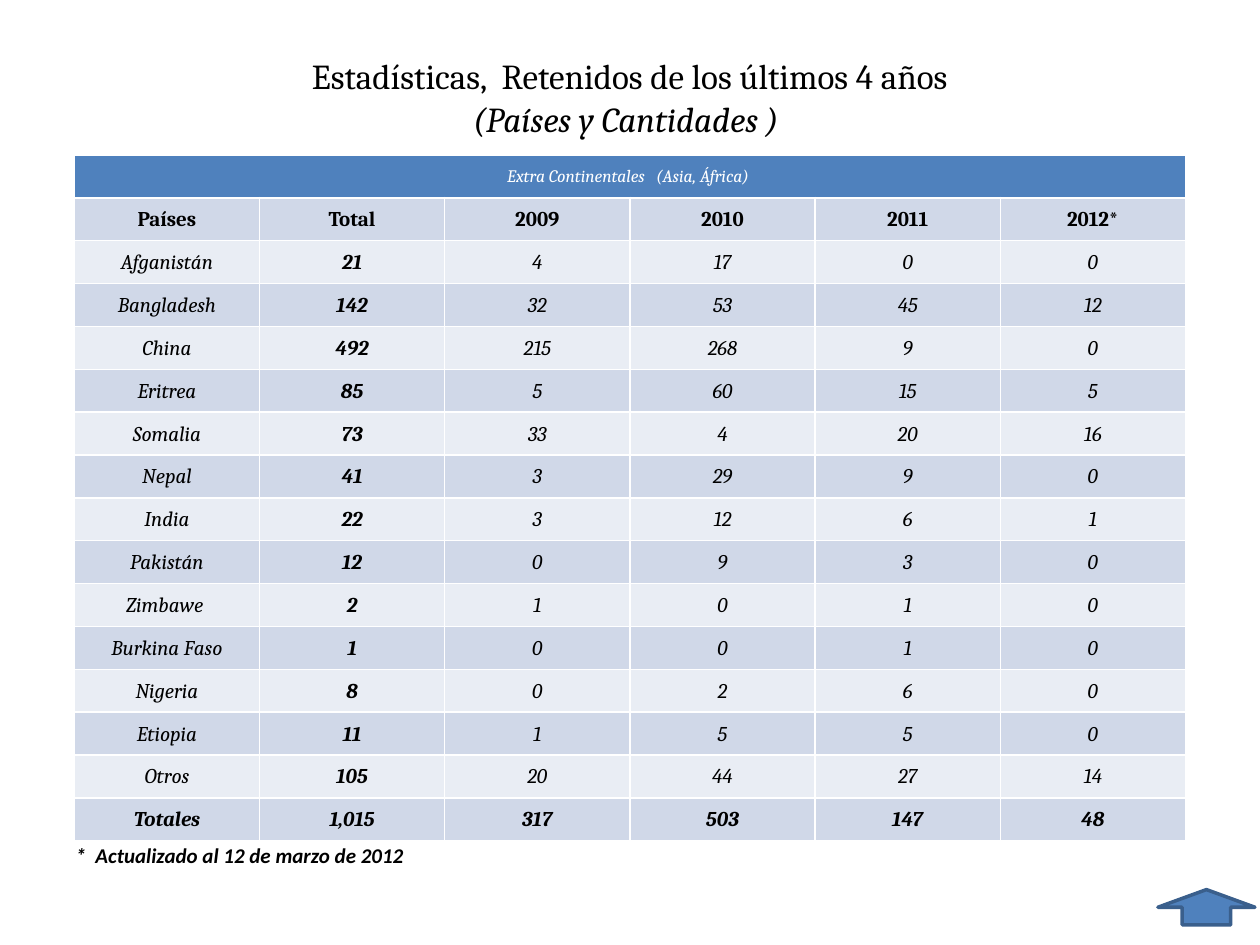
from dataclasses import dataclass

from lxml import etree
from pptx import Presentation
from pptx.dml.color import RGBColor
from pptx.enum import shapes, text
from pptx.oxml import ns
from pptx.util import Pt


@dataclass(frozen=True)
class Theme:
    ink: str = "000000"
    white: str = "FFFFFF"
    blue: str = "4F81BD"
    edge: str = "3A5F8C"
    dark: str = "D0D8E8"
    light: str = "E9EDF4"
    serif: str = "Cambria"
    sans: str = "Calibri"
    title: int = 20
    body: int = 12
    band: int = 10


THEME = Theme()
HEAD = ["Países", "Total", "2009", "2010", "2011", "2012*"]
DATA = [
    ["Afganistán", 21, 4, 17, 0, 0],
    ["Bangladesh", 142, 32, 53, 45, 12],
    ["China", 492, 215, 268, 9, 0],
    ["Eritrea", 85, 5, 60, 15, 5],
    ["Somalia", 73, 33, 4, 20, 16],
    ["Nepal", 41, 3, 29, 9, 0],
    ["India", 22, 3, 12, 6, 1],
    ["Pakistán", 12, 0, 9, 3, 0],
    ["Zimbawe ", 2, 1, 0, 1, 0],
    ["Burkina Faso", 1, 0, 0, 1, 0],
    ["Nigeria", 8, 0, 2, 6, 0],
    ["Etiopia", 11, 1, 5, 5, 0],
    ["Otros", 105, 20, 44, 27, 14],
]
SUMS = ["Totales", 1015, 317, 503, 147, 48]
ROW, NOTE, COL = 24.5, 16, 105.84


def style(font, size, color=THEME.ink, name=THEME.serif, bold=False, italic=False):
    font.size, font.name = Pt(size), name
    font.bold, font.italic = bold, italic
    font.color.rgb = RGBColor.from_string(color)


def place(shape, left, top, width, height):
    shape.left, shape.top = Pt(left), Pt(top)
    shape.width, shape.height = Pt(width), Pt(height)


def add_title(slide):
    title = slide.shapes.title
    place(title, 36, 21.6, 648, 90)
    frame = title.text_frame
    frame.auto_size = text.MSO_AUTO_SIZE.NONE
    frame.vertical_anchor = text.MSO_ANCHOR.TOP
    frame.margin_top = Pt(9.8)
    frame.text = "Estadísticas,  Retenidos de los últimos 4 años\n(Países y Cantidades ) "
    for line, slant in zip(frame.paragraphs, (False, True)):
        line.alignment = text.PP_ALIGN.CENTER
        line.space_before = Pt(0)
        style(line.font, THEME.title, italic=slant)


def rule(cell, side, width):
    props = cell._tc.get_or_add_tcPr()
    line = etree.SubElement(props, ns.qn(f"a:{side}"), w=str(Pt(width)))
    fill = etree.SubElement(line, ns.qn("a:solidFill"))
    etree.SubElement(fill, ns.qn("a:srgbClr"), val=THEME.white)


def fill_cell(cell, value, fill=None, size=THEME.body, align=text.PP_ALIGN.CENTER,
              tops=1, ends=1, **look):
    for side, width in zip(("lnL", "lnR", "lnT", "lnB"), (1, 1, tops, ends)):
        rule(cell, side, width)
    if fill:
        cell.fill.solid()
        cell.fill.fore_color.rgb = RGBColor.from_string(fill)
    else:
        cell.fill.background()
    cell.margin_left = cell.margin_right = cell.margin_top = Pt(0.72)
    cell.margin_bottom = Pt(0)
    cell.vertical_anchor = text.MSO_ANCHOR.MIDDLE if fill else text.MSO_ANCHOR.BOTTOM
    cell.text = f"{value:,}" if isinstance(value, int) else value
    line = cell.text_frame.paragraphs[0]
    line.alignment = align
    style(line.font, size, **look)
    if not value:
        line._p.get_or_add_endParaRPr().set("sz", str(size * 100))


def add_table(slide):
    body = [HEAD, *DATA, SUMS]
    count, wide = len(body) + 2, len(HEAD)
    height = ROW * (count - 1) + NOTE
    table = slide.shapes.add_table(
        count, wide, Pt(42.48), Pt(88.56), Pt(COL * wide), Pt(height)).table
    table.first_row = table.horz_banding = False
    for col in table.columns:
        col.width = Pt(COL)
    for num, row in enumerate(table.rows):
        row.height = Pt(NOTE if num == count - 1 else ROW)

    table.cell(0, 0).merge(table.cell(0, wide - 1))
    table.cell(count - 1, 0).merge(table.cell(count - 1, 1))
    for col in range(wide):
        label = "" if col else "Extra Continentales   (Asia, África) "
        fill_cell(table.cell(0, col), label, THEME.blue, THEME.band,
                  ends=1.5, color=THEME.white, italic=True)
        note = "" if col else "*  Actualizado al 12 de marzo de 2012"
        fill_cell(table.cell(count - 1, col), note, align=text.PP_ALIGN.LEFT,
                  name=THEME.sans, bold=True, italic=True)
    for num, values in enumerate(body):
        fill = THEME.light if num % 2 else THEME.dark
        for col, value in enumerate(values):
            fill_cell(table.cell(num + 1, col), value, fill,
                      tops=1 if num else 1.5,
                      bold=values in (HEAD, SUMS) or col == 1,
                      italic=values is not HEAD)


def add_arrow(slide):
    arrow = slide.shapes.add_shape(shapes.MSO_SHAPE.DOWN_ARROW, 0, 0, 0, 0)
    place(arrow, 661.68, 508.32, 55.44, 20.16)
    arrow.rotation = 180
    arrow.shadow.inherit = False
    arrow.fill.solid()
    arrow.fill.fore_color.rgb = RGBColor.from_string(THEME.blue)
    arrow.line.color.rgb = RGBColor.from_string(THEME.edge)
    arrow.line.width = Pt(2)


def main():
    deck = Presentation()
    deck.slide_width, deck.slide_height = Pt(720), Pt(540)
    slide = deck.slides.add_slide(deck.slide_layouts[5])
    add_title(slide)
    add_arrow(slide)
    add_table(slide)
    deck.save("out.pptx")


if __name__ == "__main__":
    main()
